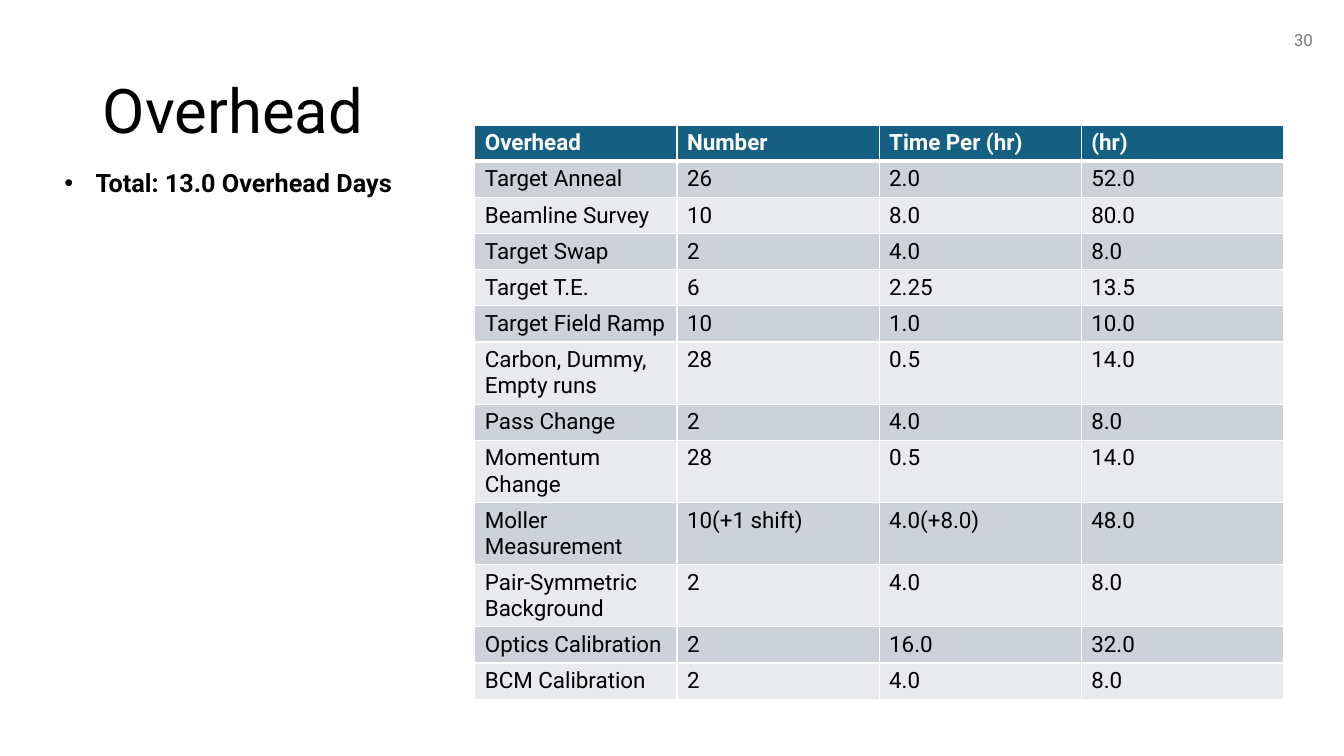
"""Build the Overhead slide with its table of overhead hours."""
from lxml import etree
from pptx import Presentation
from pptx.dml.color import RGBColor
from pptx.enum.text import MSO_ANCHOR, PP_ALIGN
from pptx.oxml.ns import qn
from pptx.util import Inches, Pt

LEFT, RIGHT = PP_ALIGN.LEFT, PP_ALIGN.RIGHT
TOP, MIDDLE = MSO_ANCHOR.TOP, MSO_ANCHOR.MIDDLE
BLACK = RGBColor(0x00, 0x00, 0x00)
WHITE = RGBColor(0xFF, 0xFF, 0xFF)
GREY = RGBColor(0x79, 0x79, 0x79)
TEAL = RGBColor(0x15, 0x60, 0x82)
BAND_DARK = RGBColor(0xCC, 0xD2, 0xD8)
BAND_LIGHT = RGBColor(0xE8, 0xEA, 0xED)

OVERHEAD_ROWS = [
    ("Overhead", "Number", "Time Per (hr)", "(hr)"),
    ("Target Anneal", "26", "2.0", "52.0"),
    ("Beamline Survey", "10", "8.0", "80.0"),
    ("Target Swap", "2", "4.0", "8.0"),
    ("Target T.E.", "6", "2.25", "13.5"),
    ("Target Field Ramp", "10", "1.0", "10.0"),
    ("Carbon, Dummy, Empty runs", "28", "0.5", "14.0"),
    ("Pass Change", "2", "4.0", "8.0"),
    ("Momentum Change", "28", "0.5", "14.0"),
    ("Moller Measurement", "10(+1 shift)", "4.0(+8.0)", "48.0"),
    ("Pair-Symmetric Background", "2", "4.0", "8.0"),
    ("Optics Calibration", "2", "16.0", "32.0"),
    ("BCM Calibration", "2", "4.0", "8.0"),
]


def write(frame, text, size, color, bold=False, align=LEFT):
    """Put one formatted run of text in a frame and return its paragraph."""
    para = frame.paragraphs[0]
    para.alignment = align
    span = para.add_run()
    span.text = text
    formats = {"name": "Roboto", "size": Pt(size), "bold": bold}
    for key, value in formats.items():
        setattr(span.font, key, value)
    span.font.color.rgb = color
    return para


def add_border(cell, side, points):
    """Draw a white border on one side of a cell."""
    line = etree.SubElement(cell._tc.get_or_add_tcPr(), qn(f"a:ln{side}"), w=str(Pt(points)))
    fill = etree.SubElement(line, qn("a:solidFill"))
    etree.SubElement(fill, qn("a:srgbClr"), val=str(WHITE))


deck = Presentation()
deck.slide_width, deck.slide_height = Inches(13.33), Inches(7.5)
page = deck.slides.add_slide(deck.slide_layouts[5])

title = page.shapes.title
title_place = {"left": 0.92, "top": 0.4, "width": 11.5, "height": 1.45}
for key, value in title_place.items():
    setattr(title, key, Inches(value))
title.text_frame.vertical_anchor = MIDDLE
write(title.text_frame, "Overhead", 44, BLACK).line_spacing = 0.9

table_frame = page.shapes.add_table(
    len(OVERHEAD_ROWS), 4, Inches(4.71), Inches(1.24), Inches(8.02), Inches(4.25))
table = table_frame.table
for row_index, values in enumerate(OVERHEAD_ROWS):
    is_header = row_index == 0
    table.rows[row_index].height = Inches(0.53 if row_index == 6 else 0.31)
    band = BAND_DARK if row_index % 2 else BAND_LIGHT
    widths = {"L": 1, "R": 1, "T": 3 if row_index == 1 else 1, "B": 3 if is_header else 1}
    for column_index, value in enumerate(values):
        cell = table.cell(row_index, column_index)
        for side, points in widths.items():
            add_border(cell, side, points)
        cell.fill.solid()
        cell.fill.fore_color.rgb = TEAL if is_header else band
        write(cell.text_frame, value, 16, WHITE if is_header else BLACK, is_header)

total_box = page.shapes.add_textbox(Inches(0.54), Inches(1.61), Inches(4.18), Inches(0.4))
total_box.text_frame.word_wrap = True
total_box.text_frame.vertical_anchor = TOP
total_para = write(total_box.text_frame, "Total: 13.0 Overhead Days", 18, BLACK, True)
bullet_format = total_para._p.get_or_add_pPr()
bullet_format.set("marL", str(Inches(0.31)))
bullet_format.set("indent", str(Inches(-0.31)))
etree.SubElement(bullet_format, qn("a:buFont"), typeface="Arial")
etree.SubElement(bullet_format, qn("a:buChar"), char="•")

number_box = page.shapes.add_textbox(Inches(10.12), Inches(0.2), Inches(3), Inches(0.4))
number_box.text_frame.word_wrap = True
number_box.text_frame.vertical_anchor = MIDDLE
write(number_box.text_frame, "30", 12, GREY, align=RIGHT)

deck.save("out.pptx")
